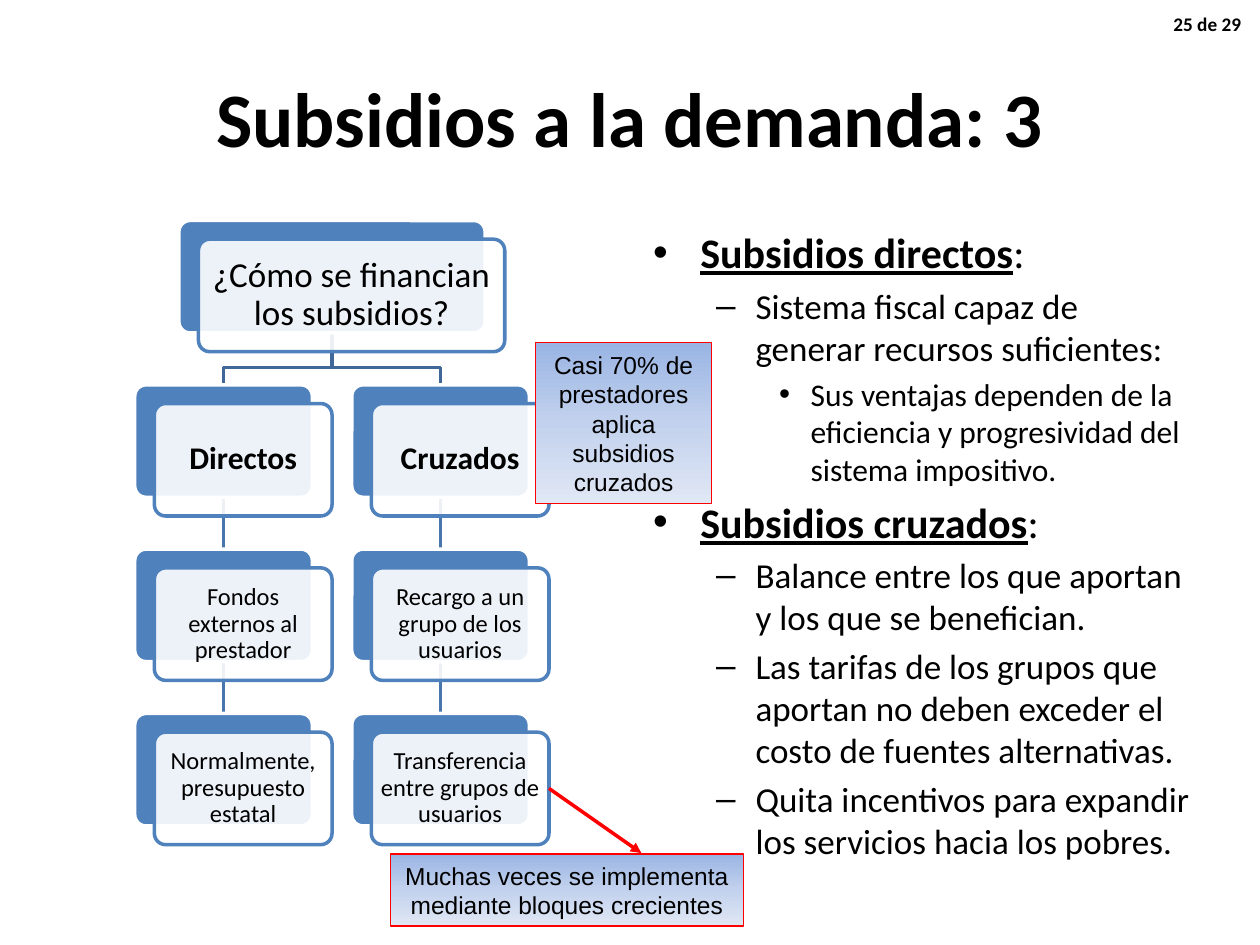
from copy import deepcopy
from dataclasses import dataclass

from pptx import Presentation
from pptx.dml.color import RGBColor
from pptx.enum import shapes, text
from pptx.oxml import ns, xmlchemy
from pptx.util import Pt


@dataclass(frozen=True)
class Theme:
    font: str = "Calibri"
    note_font: str = "Arial"
    ink: str = "000000"
    white: str = "FFFFFF"
    blue: str = "4F81BD"
    elbow: str = "3F6797"
    stem: str = "4875AC"
    red: str = "FF0000"
    gradient: tuple = ("9AB5E4", "C2D1ED", "E1E8F5")
    title: int = 44
    levels: tuple = (24, 20, 18)
    root: int = 20
    branch: int = 18
    leaf: int = 14
    note: int = 14
    page: int = 11


T = Theme()

# Tree grid, in points
COLUMNS = (77, 201)
TOP, ROW_STEP = 126, 93.9
CARD_W, CARD_H, ROOT_W = 101.5, 64.25, 175
SHIFT_X, SHIFT_Y = 11.2, 10.7

BRANCHES = (
    ("Directos", "Fondos externos al prestador", "Normalmente, presupuesto estatal"),
    ("Cruzados", "Recargo a un grupo de los usuarios",
     "Transferencia entre grupos de usuarios"),
)

BODY = (
    (0, "Subsidios directos"),
    (1, "Sistema fiscal capaz de generar recursos suficientes:"),
    (2, "Sus ventajas dependen de la eficiencia y progresividad del sistema impositivo."),
    (0, "Subsidios cruzados"),
    (1, "Balance entre los que aportan y los que se benefician."),
    (1, "Las tarifas de los grupos que aportan no deben exceder el costo "
        "de fuentes alternativas."),
    (1, "Quita incentivos para expandir los servicios hacia los pobres."),
)


def rgb(value):
    return RGBColor.from_string(value)


def box(left, top, width, height):
    return Pt(left), Pt(top), Pt(width), Pt(height)


def place(sp, left, top, width, height):
    sp.left, sp.top, sp.width, sp.height = box(left, top, width, height)


def style(r, size, bold=False, font=T.font):
    r.font.size, r.font.bold, r.font.name = Pt(size), bold, font
    r.font.color.rgb = rgb(T.ink)


def write(tf, words, size, align, bold=False, font=T.font):
    tf.word_wrap = True
    tf.text = words
    p = tf.paragraphs[0]
    p.alignment = align
    style(p.runs[0], size, bold, font)
    return p


def outline(sp, color, width=2):
    sp.line.color.rgb, sp.line.width = rgb(color), Pt(width)


def add_line(s, color, x1=0, y1=0, x2=0, y2=0):
    line = s.shapes.add_connector(shapes.MSO_CONNECTOR.STRAIGHT,
                                  Pt(x1), Pt(y1), Pt(x2), Pt(y2))
    outline(line, color)
    line._element.spPr.append(xmlchemy.OxmlElement("a:effectLst"))
    return line


def add_elbow(s, points):
    start, *rest = [(Pt(x), Pt(y)) for x, y in points]
    builder = s.shapes.build_freeform(*start)
    builder.add_line_segments(rest, close=False)
    sp = builder.convert_to_shape()
    sp.fill.background()
    sp.shadow.inherit = False
    outline(sp, T.elbow)


def add_panel(s, left, top, width, fill, line):
    sp = s.shapes.add_shape(shapes.MSO_SHAPE.ROUNDED_RECTANGLE,
                            *box(left, top, width, CARD_H))
    sp.adjustments[0] = 0.1
    sp.shadow.inherit = False
    sp.fill.solid()
    sp.fill.fore_color.rgb = rgb(fill)
    outline(sp, line)
    return sp


def add_card(s, left, top, width, words, size, bold=False):
    """Blue panel with a translucent white label panel in front of it."""
    back = add_panel(s, left, top, width, T.blue, T.white)
    front = add_panel(s, left + SHIFT_X, top + SHIFT_Y, width, T.white, T.blue)
    alpha = xmlchemy.OxmlElement("a:alpha")
    alpha.set("val", "90000")
    front._element.spPr.find(ns.qn("a:solidFill"))[0].append(alpha)
    tf = front.text_frame
    tf.margin_left = tf.margin_right = tf.margin_top = tf.margin_bottom = Pt(2)
    tf.vertical_anchor = text.MSO_ANCHOR.MIDDLE
    write(tf, words, size, text.PP_ALIGN.CENTER, bold).line_spacing = 0.9
    return back, front


def add_tree(s):
    """Draws the tree and returns the label of its last leaf."""
    centers = [x + CARD_W / 2 for x in COLUMNS]
    middle = sum(centers) / 2
    rows = [TOP + ROW_STEP * (i + 1) for i in range(3)]

    # Lines come first so that they stay behind the cards
    start, bend = TOP + CARD_H, TOP + 84
    for x in centers:
        add_elbow(s, [(middle, start), (middle, bend), (x, bend), (x, rows[0])])
    stems = [[add_line(s, T.stem) for _ in rows[1:]] for _ in COLUMNS]

    add_card(s, middle - ROOT_W / 2, TOP, ROOT_W,
             "¿Cómo se financian los subsidios?", T.root)
    for left, labels, lines in zip(COLUMNS, BRANCHES, stems):
        backs = []
        for i, (top, words) in enumerate(zip(rows, labels)):
            size = T.leaf if i else T.branch
            back, front = add_card(s, left, top, CARD_W, words, size, bold=i == 0)
            backs.append(back)
        for line, upper, lower in zip(lines, backs, backs[1:]):
            line.begin_connect(upper, 2)
            line.end_connect(lower, 0)
    return front


def add_note(s, left, top, width, height, words):
    sp = s.shapes.add_shape(shapes.MSO_SHAPE.RECTANGLE, *box(left, top, width, height))
    sp.shadow.inherit = False
    sp.fill.gradient()
    sp.fill.gradient_angle = 270
    # The gradient needs a middle stop between the two it starts with
    stops = sp._element.spPr.find(ns.qn("a:gradFill")).find(ns.qn("a:gsLst"))
    stops.insert(1, deepcopy(stops[0]))
    for i, (stop, color) in enumerate(zip(sp.fill.gradient_stops, T.gradient)):
        stop.position = i / 2
        stop.color.rgb = rgb(color)
    outline(sp, T.red, 0.75)
    write(sp.text_frame, words, T.note, text.PP_ALIGN.CENTER, font=T.note_font)
    sp.text_frame.auto_size = text.MSO_AUTO_SIZE.SHAPE_TO_FIT_TEXT


def fill_body(sp):
    place(sp, 366, 126, 324, 356.4)
    tf = sp.text_frame
    for i, (level, words) in enumerate(BODY):
        p = tf.add_paragraph() if i else tf.paragraphs[0]
        p.text, p.level = words, level
        style(p.runs[0], T.levels[level], bold=level == 0)
        if level == 0:
            p.runs[0].font.underline = True
            r = p.add_run()
            r.text = ":"
            style(r, T.levels[level])
    tf.paragraphs[0].space_before = Pt(0)


def main():
    prs = Presentation()
    prs.slide_width, prs.slide_height = Pt(720), Pt(540)
    s = prs.slides.add_slide(prs.slide_layouts[1])

    # Title and list
    title = s.shapes.title
    place(title, 36, 21.6, 648, 90)
    write(title.text_frame, "Subsidios a la demanda: 3", T.title,
          text.PP_ALIGN.CENTER, bold=True)
    fill_body(s.placeholders[1])

    # Tree
    last_leaf = add_tree(s)

    # Page number
    page = s.shapes.add_textbox(*box(662.4, 3.6, 54, 20.9))
    page.text_frame.margin_left = 0
    write(page.text_frame, "25 de 29", T.page, text.PP_ALIGN.RIGHT, bold=True)

    # Notes and arrow
    add_note(s, 223.2, 488, 201.6, 41.2,
             "Muchas veces se implementa mediante bloques crecientes")
    arrow = add_line(s, T.red, 312.5, 451, 366.5, 487.5)
    arrow.begin_connect(last_leaf, 3)
    head = xmlchemy.OxmlElement("a:tailEnd")
    head.set("type", "triangle")
    arrow.line._get_or_add_ln().append(head)
    add_note(s, 306, 195.8, 100.8, 92.1,
             "Casi 70% de prestadores aplica subsidios cruzados")

    prs.save("out.pptx")


if __name__ == "__main__":
    main()
